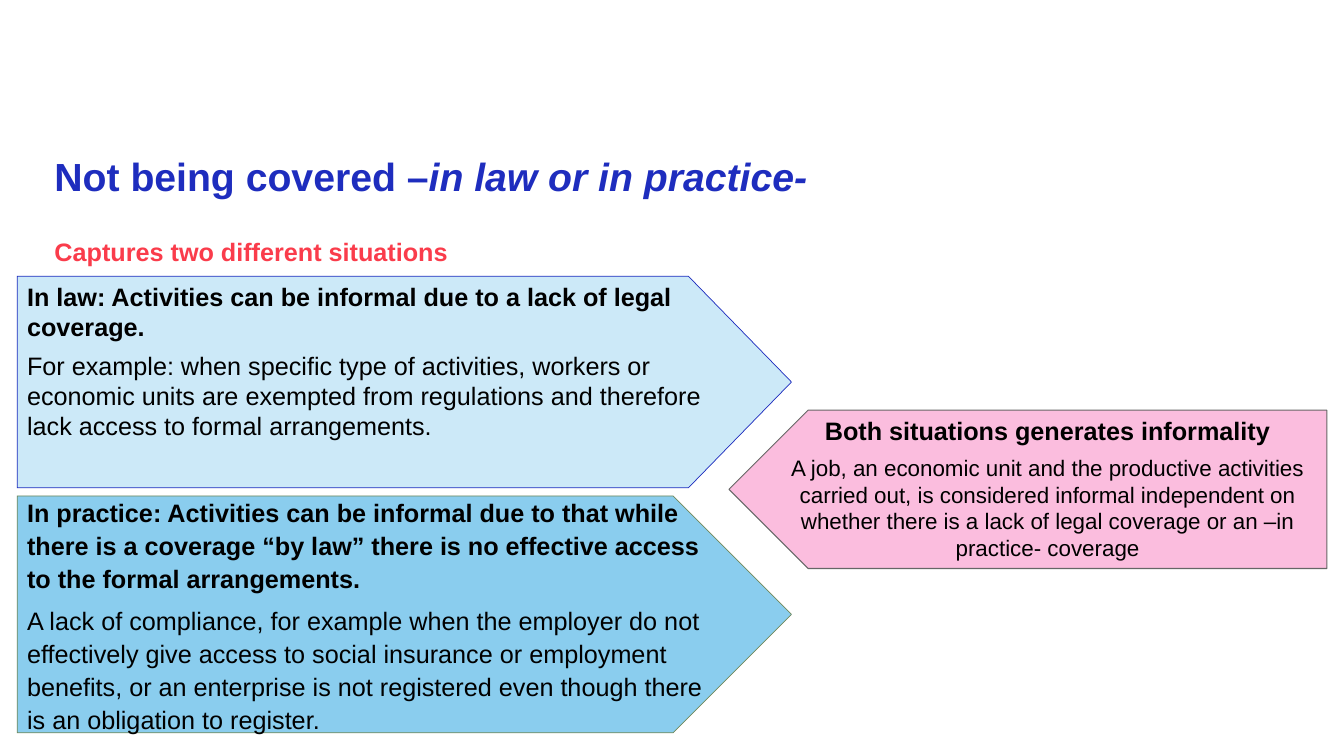
from dataclasses import dataclass

from lxml.etree import SubElement
from pptx import Presentation
from pptx.dml.color import RGBColor
from pptx.enum.shapes import MSO_SHAPE
from pptx.enum.text import MSO_ANCHOR, MSO_AUTO_SIZE, PP_ALIGN
from pptx.oxml.ns import qn
from pptx.util import Inches, Pt


@dataclass(frozen=True)
class Theme:
    font: str = "Arial"
    title_size: int = 28
    text_size: int = 18
    small_size: int = 16
    blue: str = "1E2DBE"
    red: str = "FA3C4B"
    black: str = "000000"
    pale_blue: str = "CCE9F8"
    sky_blue: str = "8ACDEE"
    pink: str = "FBBDDE"
    green: str = "6F885A"
    grey: str = "666666"


theme = Theme()


def style(run, size, color, bold=True, italic=False):
    run.font.name = theme.font
    run.font.size = Pt(size)
    run.font.bold = bold
    run.font.italic = italic
    run.font.color.rgb = RGBColor.from_string(color)


def place(placeholder, left, top, width, height):
    placeholder.left, placeholder.top = Inches(left), Inches(top)
    placeholder.width, placeholder.height = Inches(width), Inches(height)
    frame = placeholder.text_frame
    frame.margin_left = frame.margin_right = frame.margin_top = frame.margin_bottom = 0
    frame.vertical_anchor = MSO_ANCHOR.TOP
    frame.word_wrap = True
    frame.auto_size = MSO_AUTO_SIZE.NONE
    frame.paragraphs[0].alignment = PP_ALIGN.LEFT
    return frame.paragraphs[0]


prs = Presentation()
prs.slide_width, prs.slide_height = Inches(13.33), Inches(7.5)
slide = prs.slides.add_slide(prs.slide_layouts[1])

# Title
heading = place(slide.shapes.title, 0.54, 1.56, 12.26, 0.79)
heading.text = "Not being covered –"
heading.line_spacing = 0.9
style(heading.runs[0], theme.title_size, theme.blue)
law_or_practice = heading.add_run()
law_or_practice.text = "in law or in practice-"
style(law_or_practice, theme.title_size, theme.blue, italic=True)

# Lead-in
lead_in = place(slide.placeholders[1], 0.54, 2.34, 11.33, 5.08)
lead_in.text = "Captures two different situations"
indents = lead_in._p.get_or_add_pPr()
indents.set("marL", "0")
indents.set("indent", "0")
SubElement(indents, qn("a:buNone"))
lead_in.space_before = Pt(0)
lead_in.space_after = Pt(6)
style(lead_in.runs[0], theme.text_size, theme.red)

# Two situations and their outcome: box, point depth, flipped, fill, line,
# line width, anchor, alignment, line spacing, detail size, headline, detail
arrows = [
    ((0.17, 4.92, 7.68, 2.35), 0.5, False, theme.sky_blue, theme.green, 0.5,
     MSO_ANCHOR.MIDDLE, PP_ALIGN.LEFT, 1.1, theme.text_size,
     "In practice: Activities can be informal due to that while there is a "
     "coverage “by law” there is no effective access to the formal arrangements.",
     "A lack of compliance, for example when the employer do not effectively give "
     "access to social insurance or employment benefits, or an enterprise is not "
     "registered even though there is an obligation to register."),
    ((7.23, 4.07, 5.93, 1.57), 0.5, True, theme.pink, theme.grey, 0.75,
     MSO_ANCHOR.TOP, PP_ALIGN.CENTER, 1.0, theme.small_size,
     "Both situations generates informality",
     "A job, an economic unit and the productive activities carried out, is "
     "considered informal independent on whether there is a lack of legal "
     "coverage or an –in practice- coverage"),
    ((0.17, 2.74, 7.68, 2.1), 0.487, False, theme.pale_blue, theme.blue, 0.5,
     MSO_ANCHOR.TOP, PP_ALIGN.LEFT, 1.0, theme.text_size,
     "In law: Activities can be informal due to a lack of legal coverage.",
     "For example: when specific type of activities, workers or economic units "
     "are exempted from regulations and therefore lack access to formal "
     "arrangements."),
]
for (box, depth, flipped, fill, line, line_width, anchor, alignment, spacing,
     detail_size, headline, detail) in arrows:
    arrow = slide.shapes.add_shape(MSO_SHAPE.PENTAGON, *map(Inches, box))
    arrow.adjustments[0] = depth
    arrow.shadow.inherit = False
    arrow.fill.solid()
    arrow.fill.fore_color.rgb = RGBColor.from_string(fill)
    arrow.line.color.rgb = RGBColor.from_string(line)
    arrow.line.width = Pt(line_width)
    if flipped:
        arrow._element.spPr.find(qn("a:xfrm")).set("flipH", "1")

    frame = arrow.text_frame
    frame.word_wrap = True
    frame.vertical_anchor = anchor
    frame.text = f"{headline}\n{detail}"
    sizes = (theme.text_size, detail_size)
    for paragraph, size, bold in zip(frame.paragraphs, sizes, (True, False)):
        paragraph.alignment = alignment
        paragraph.line_spacing = spacing
        paragraph.space_after = Pt(6)
        style(paragraph.runs[0], size, theme.black, bold)

prs.save("out.pptx")
